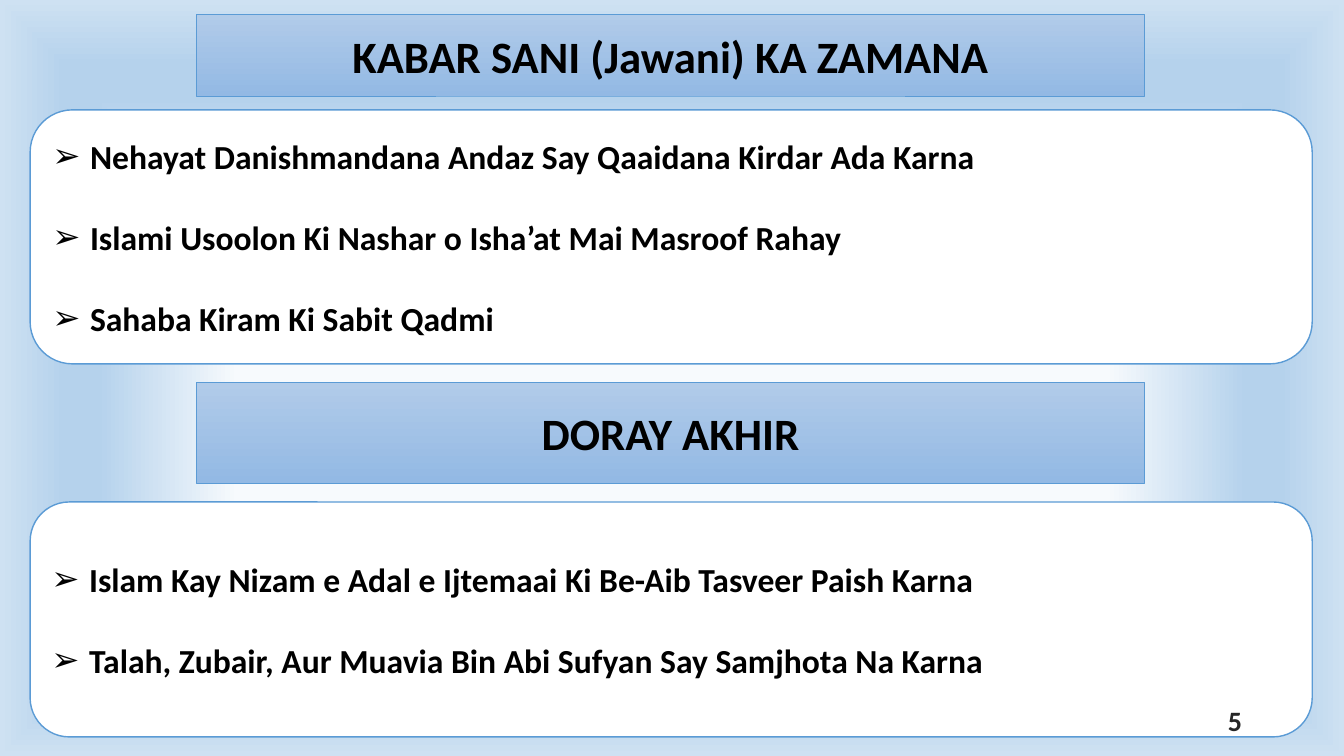
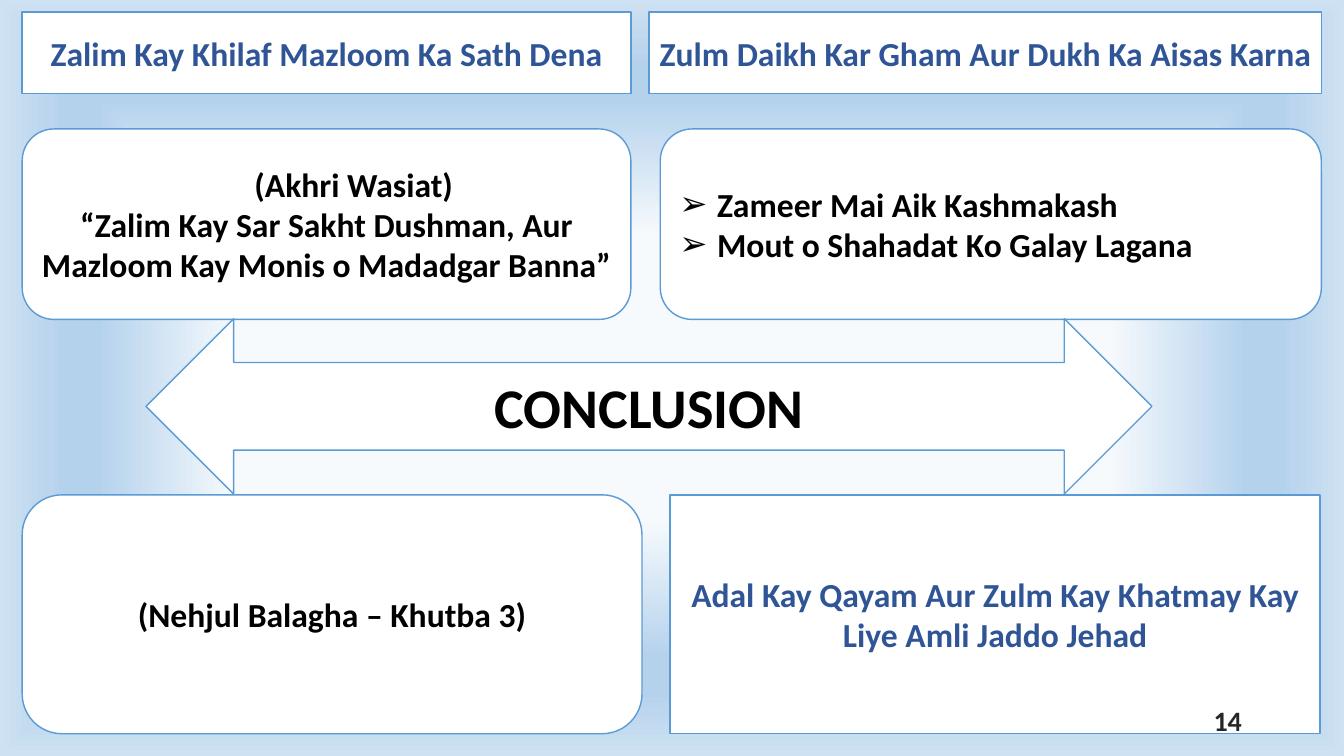
from lxml import etree
from pptx import Presentation
from pptx.dml.color import RGBColor
from pptx.enum.shapes import MSO_SHAPE
from pptx.enum.text import MSO_ANCHOR, MSO_AUTO_SIZE, PP_ALIGN
from pptx.oxml.ns import qn
from pptx.util import Cm, Pt

RECTANGLE = MSO_SHAPE.RECTANGLE
ROUNDED = MSO_SHAPE.ROUNDED_RECTANGLE
DOUBLE_ARROW = MSO_SHAPE.LEFT_RIGHT_ARROW
LEFT, CENTER, RIGHT = PP_ALIGN.LEFT, PP_ALIGN.CENTER, PP_ALIGN.RIGHT

WHITE, BLACK, GREY = "FFFFFF", "000000", "262626"
NAVY, OUTLINE = "2F5597", "5B9BD5"
BAND_COLORS = ("B1CBE9", "93B9E4")
# position %, colour, opacity %
BACKGROUND_STOPS = ((37, "F7FAFD", 97), (74, "B5D2EC", 100),
                    (83, "B5D2EC", 100), (100, "CEE1F2", 100))

FONT_FORMAT = {"name": "Calibri", "bold": True}
FRAME_FORMAT = {
    "word_wrap": True,
    "auto_size": MSO_AUTO_SIZE.NONE,
    "vertical_anchor": MSO_ANCHOR.MIDDLE,
    "margin_left": Cm(0.25), "margin_right": Cm(0.25),
    "margin_top": Cm(0.13), "margin_bottom": Cm(0.13),
}
BULLET_INDENT = Cm(0.95)
# Share of a rounded rectangle's height by which its corners inset the text
CORNER_INSET = 0.1667 * 0.29


def rgb(hex_color):
    return RGBColor.from_string(hex_color)


def apply_format(target, values):
    for name, value in values.items():
        setattr(target, name, value)


def place(shape, left, top, width, height):
    apply_format(shape, {"left": Cm(left), "top": Cm(top),
                         "width": Cm(width), "height": Cm(height)})


def write_text(shape, lines, size=24, color=BLACK, align=CENTER, gap=0):
    """Fill a shape with one paragraph per line, gap points apart."""
    frame = shape.text_frame
    apply_format(frame, FRAME_FORMAT)
    frame.text = "\n".join(lines)
    for number, paragraph in enumerate(frame.paragraphs):
        apply_format(paragraph, {"alignment": align, "line_spacing": 1.0,
                                 "space_before": Pt(gap if number else 0)})
        for run in paragraph.runs:
            apply_format(run.font, {**FONT_FORMAT, "size": Pt(size)})
            run.font.color.rgb = rgb(color)


def indent(paragraph, left, first_line=0):
    properties = paragraph._p.get_or_add_pPr()
    properties.set("marL", str(left))
    properties.set("indent", str(first_line))
    return properties


def outline(shape, width):
    shape.line.color.rgb = rgb(OUTLINE)
    shape.line.width = Pt(width)


def add_panel(slide, kind, box, lines=(), **text_format):
    shape = slide.shapes.add_shape(kind, *map(Cm, box))
    shape.shadow.inherit = False
    shape.fill.solid()
    shape.fill.fore_color.rgb = rgb(WHITE)
    outline(shape, 1)
    if lines:
        write_text(shape, lines, **text_format)
    return shape


def style_band(shape, text):
    shape.fill.gradient()
    shape.fill.gradient_angle = 270
    for stop, color in zip(shape.fill.gradient_stops, BAND_COLORS):
        stop.color.rgb = rgb(color)
    outline(shape, 0.5)
    write_text(shape, [text], size=32)


def add_list_panel(slide, placeholder, box, lines, gap=0):
    """Draw a rounded panel with the body placeholder as its bullet list."""
    panel = add_panel(slide, ROUNDED, box)
    left, top, width, height = box
    inset = height * CORNER_INSET
    place(placeholder, left + inset, top, width - 2 * inset, height)
    write_text(placeholder, lines, align=LEFT, gap=gap)
    for paragraph in placeholder.text_frame.paragraphs:
        properties = indent(paragraph, BULLET_INDENT, -BULLET_INDENT)
        etree.SubElement(properties, qn("a:buFont"), typeface="Arial")
        etree.SubElement(properties, qn("a:buChar"), char="➢")
    panel.element.addnext(placeholder.element)


def add_page_number(slide, number):
    box = slide.shapes.add_textbox(Cm(23.93), Cm(17.65), Cm(7.62), Cm(1.02))
    write_text(box, [str(number)], size=20, color=GREY, align=RIGHT)


def set_background(master):
    """Give the master a rectangular gradient that all slides inherit."""
    master.background.fill.gradient()
    gradient = master.element.find(".//" + qn("a:gradFill"))
    for child in list(gradient):
        gradient.remove(child)
    stops = etree.SubElement(gradient, qn("a:gsLst"))
    for position, color, opacity in BACKGROUND_STOPS:
        stop = etree.SubElement(stops, qn("a:gs"), pos=str(position * 1000))
        fill = etree.SubElement(stop, qn("a:srgbClr"), val=color)
        if opacity < 100:
            etree.SubElement(fill, qn("a:alpha"), val=str(opacity * 1000))
    shade = etree.SubElement(gradient, qn("a:path"), path="rect")
    etree.SubElement(shade, qn("a:fillToRect"),
                     dict.fromkeys("ltrb", "50000"))


def build_eras(presentation):
    slide = presentation.slides.add_slide(presentation.slide_layouts[3])
    title, first_list, second_list = slide.placeholders

    place(title, 4.95, 0.36, 23.9, 2.06)
    style_band(title, "KABAR SANI (Jawani) KA ZAMANA")
    add_list_panel(slide, first_list, (0.76, 2.77, 32.31, 6.4), [
        "Nehayat Danishmandana Andaz Say Qaaidana Kirdar Ada Karna",
        "Islami Usoolon Ki Nashar o Isha’at Mai Masroof Rahay",
        "Sahaba Kiram Ki Sabit Qadmi",
    ], gap=29)

    band = add_panel(slide, RECTANGLE, (4.95, 9.63, 23.9, 2.54))
    style_band(band, "DORAY AKHIR")
    add_list_panel(slide, second_list, (0.76, 12.65, 32.31, 5.92), [
        "Islam Kay Nizam e Adal e Ijtemaai Ki Be-Aib Tasveer Paish Karna",
        "Talah, Zubair, Aur Muavia Bin Abi Sufyan Say Samjhota Na Karna",
    ], gap=29)
    add_page_number(slide, 5)


def build_conclusion(presentation):
    slide = presentation.slides.add_slide(presentation.slide_layouts[1])
    title, reasons = slide.placeholders

    for kind, box, text, color in (
        (RECTANGLE, (0.56, 0.3, 15.34, 2.06),
         "Zalim Kay Khilaf Mazloom Ka Sath Dena", NAVY),
        (RECTANGLE, (16.36, 0.3, 16.95, 2.06),
         "Zulm Daikh Kar Gham Aur Dukh Ka Aisas Karna", NAVY),
        (ROUNDED, (0.56, 12.47, 15.62, 6.02),
         "(Nehjul Balagha – Khutba 3)", BLACK),
        (RECTANGLE, (16.89, 12.47, 16.38, 6.02),
         "Adal Kay Qayam Aur Zulm Kay Khatmay Kay Liye Amli Jaddo Jehad",
         NAVY),
    ):
        add_panel(slide, kind, box, [text], color=color)

    will = add_panel(slide, ROUNDED, (0.56, 3.25, 15.34, 4.8), [
        "(Akhri Wasiat)",
        "“Zalim Kay Sar Sakht Dushman, Aur Mazloom Kay Monis o Madadgar Banna”",
    ])
    heading = will.text_frame.paragraphs[0]
    heading.alignment = LEFT
    indent(heading, Cm(5.37))

    add_list_panel(slide, reasons, (16.64, 3.25, 16.66, 4.8), [
        "Zameer Mai Aik Kashmakash",
        "Mout o Shahadat Ko Galay Lagana",
    ])

    arrow_box = (3.68, 8.03, 25.35, 4.42)
    arrow = add_panel(slide, DOUBLE_ARROW, arrow_box)
    place(title, *arrow_box)
    write_text(title, ["CONCLUSION"], size=40)
    arrow.element.addnext(title.element)
    add_page_number(slide, 14)


def main():
    presentation = Presentation()
    presentation.slide_width = Cm(33.87)
    presentation.slide_height = Cm(19.05)
    set_background(presentation.slide_master)
    build_eras(presentation)
    build_conclusion(presentation)
    presentation.save("out.pptx")


if __name__ == "__main__":
    main()
